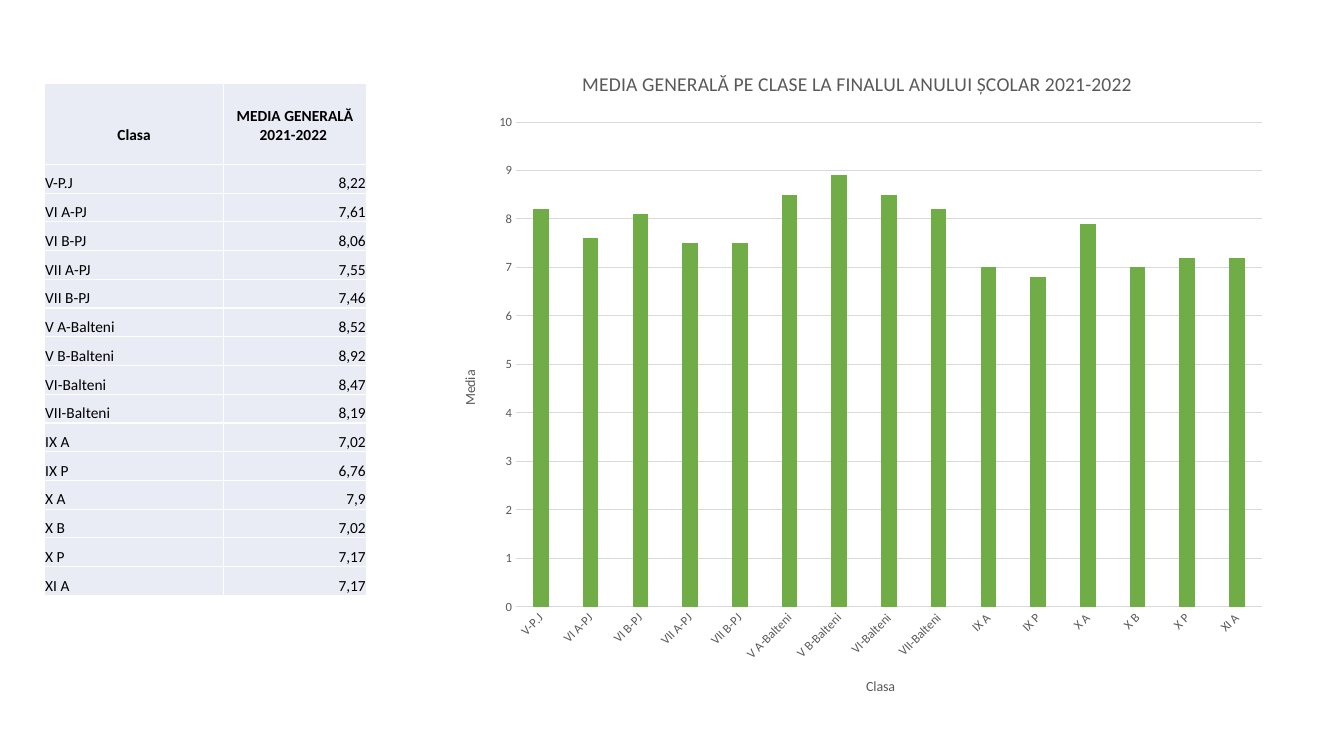
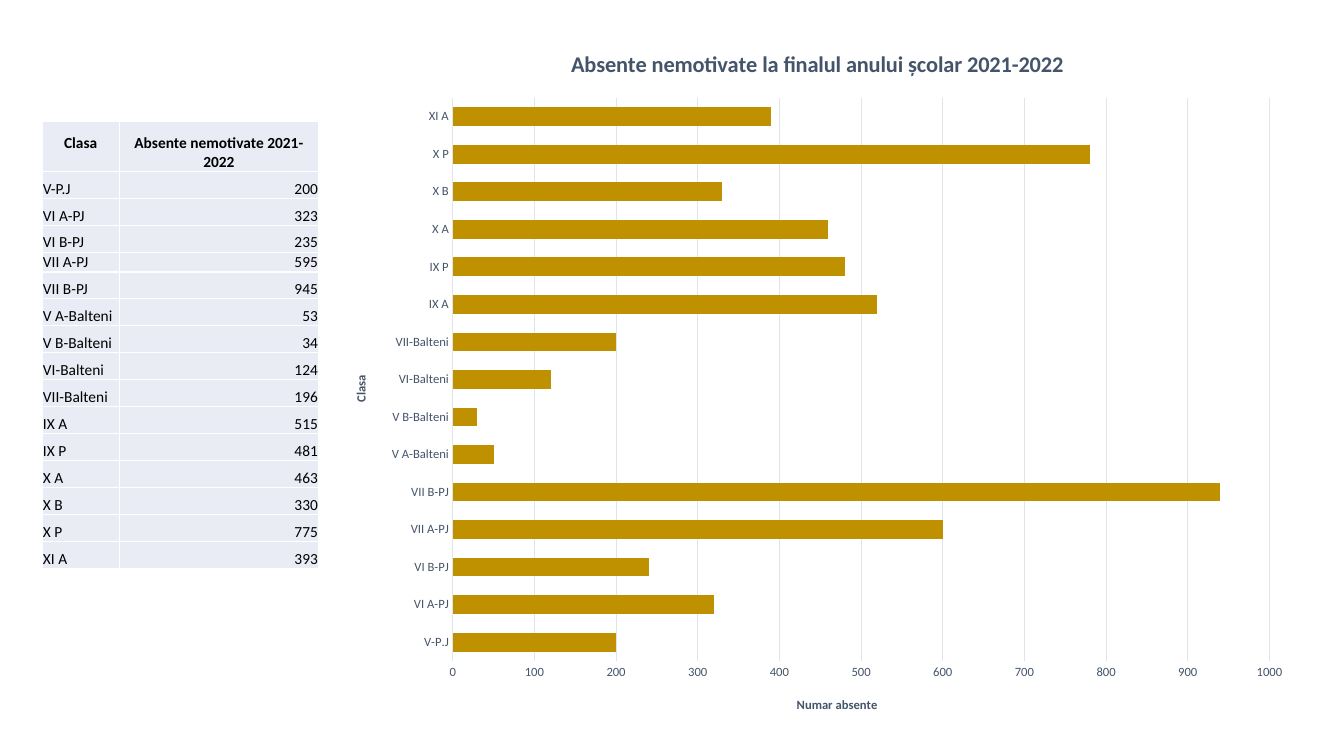
"""Build two slides that compare school classes by average grade and by absences."""
from dataclasses import dataclass

from lxml import etree
from pptx import Presentation
from pptx.chart.data import CategoryChartData
from pptx.dml.color import RGBColor
from pptx.enum.chart import XL_CHART_TYPE, XL_TICK_MARK
from pptx.enum.text import MSO_ANCHOR, PP_ALIGN
from pptx.oxml.ns import qn
from pptx.util import Pt

COLUMNS = XL_CHART_TYPE.COLUMN_CLUSTERED
BARS = XL_CHART_TYPE.BAR_CLUSTERED
NO_TICK = XL_TICK_MARK.NONE
BOTTOM = MSO_ANCHOR.BOTTOM
LEFT, CENTER, RIGHT = PP_ALIGN.LEFT, PP_ALIGN.CENTER, PP_ALIGN.RIGHT


@dataclass(frozen=True)
class Theme:
    """Colours and type sizes shared by the slides."""

    font: str = "Calibri"
    ink: str = "000000"
    cell: str = "E9EBF5"
    border: str = "FFFFFF"
    gray: str = "595959"
    gray_line: str = "D9D9D9"
    slate: str = "44546A"
    slate_line: str = "E0E5EB"
    green: str = "70AD47"
    gold: str = "BF9000"
    table_size: float = 11
    label_size: float = 9


@dataclass(frozen=True)
class ChartStyle:
    """Look of one chart; box and plot are left, top, width, height on the slide."""

    kind: int
    bar_color: str
    text_color: str
    line_color: str
    title_size: float
    axis_title_size: float
    bold: bool
    gap: int
    overlap: int
    maximum: float
    step: float
    decimals: int
    box: tuple
    plot: tuple
    label_rotation: int = 0


THEME = Theme()
GRADE_STYLE = ChartStyle(COLUMNS, THEME.green, THEME.gray, THEME.gray_line, 14, 10,
                         False, 219, -27, 10, 1, 1, (314.6, 34.6, 599, 476.6),
                         (368.6, 87.2, 532.8, 346.3), -45)
ABSENCE_STYLE = ChartStyle(BARS, THEME.gold, THEME.slate, THEME.slate_line, 16, 9,
                           True, 100, 0, 1000, 100, -1, (237.6, 18, 692.6, 506.2),
                           (323.4, 70, 583.4, 402.2))
CLASSES = ["V-P.J", "VI A-PJ", "VI B-PJ", "VII A-PJ", "VII B-PJ", "V A-Balteni",
           "V B-Balteni", "VI-Balteni", "VII-Balteni", "IX A", "IX P", "X A", "X B",
           "X P", "XI A"]
GRADES = [8.22, 7.61, 8.06, 7.55, 7.46, 8.52, 8.92, 8.47, 8.19, 7.02, 6.76, 7.9,
          7.02, 7.17, 7.17]
ABSENCES = [200, 323, 235, 595, 945, 53, 34, 124, 196, 515, 481, 463, 330, 775, 393]


def style_font(font, color, size, bold=False):
    """Apply the theme font with a colour, size and weight."""
    font.name = THEME.font
    font.size = Pt(size)
    font.bold = bold
    font.color.rgb = RGBColor.from_string(color)


def add_borders(cell):
    """Draw a thin border on all four sides of a cell."""
    properties = cell._tc.get_or_add_tcPr()
    for side in ("a:lnL", "a:lnR", "a:lnT", "a:lnB"):
        line = etree.SubElement(properties, qn(side), w=str(Pt(1)))
        fill = etree.SubElement(line, qn("a:solidFill"))
        etree.SubElement(fill, qn("a:srgbClr"), val=THEME.border)


def fill_cell(cell, text, alignment, bold=False, bottom=0):
    """Write and style one table cell."""
    add_borders(cell)
    cell.fill.solid()
    cell.fill.fore_color.rgb = RGBColor.from_string(THEME.cell)
    cell.vertical_anchor = BOTTOM
    cell.margin_left = cell.margin_right = cell.margin_top = Pt(0.5)
    cell.margin_bottom = Pt(bottom)
    cell.text = text
    paragraph = cell.text_frame.paragraphs[0]
    paragraph.alignment = alignment
    style_font(paragraph.font, THEME.ink, THEME.table_size, bold)


def add_class_table(slide, position, widths, heights, headers, header_bottoms, values):
    """Add a table with one row per class and one value column."""
    frame = slide.shapes.add_table(len(heights), len(widths), *map(Pt, position),
                                   Pt(sum(widths)), Pt(sum(heights)))
    table = frame.table
    table.first_row = table.horz_banding = False
    for column, width in zip(table.columns, widths):
        column.width = Pt(width)
    for row, height in zip(table.rows, heights):
        row.height = Pt(height)
    for column, (header, bottom) in enumerate(zip(headers, header_bottoms)):
        fill_cell(table.cell(0, column), header, CENTER, True, bottom)
    for row, (name, value) in enumerate(zip(CLASSES, values), start=1):
        fill_cell(table.cell(row, 0), name, LEFT)
        fill_cell(table.cell(row, 1), str(value).replace(".", ","), RIGHT)


def set_title(owner, text, color, size, bold):
    """Give a chart or an axis a styled title."""
    owner.has_title = True
    title = owner.chart_title if hasattr(owner, "chart_title") else owner.axis_title
    title.text_frame.text = text
    style_font(title.text_frame.paragraphs[0].font, color, size, bold)


def style_line(line, color):
    """Draw a hairline in the given colour."""
    line.width = Pt(0.75)
    line.color.rgb = RGBColor.from_string(color)


def style_axis(axis, title, style):
    """Style the labels, ticks and title of an axis."""
    axis.major_tick_mark = axis.minor_tick_mark = NO_TICK
    style_font(axis.tick_labels.font, style.text_color, THEME.label_size)
    set_title(axis, title, style.text_color, style.axis_title_size, style.bold)


def place_plot(chart, box, plot):
    """Fix the inner plot area inside the chart box."""
    left, top, width, height = box
    fractions = ((plot[0] - left) / width, (plot[1] - top) / height,
                 plot[2] / width, plot[3] / height)
    plot_area = chart._chartSpace.chart.plotArea
    for old_layout in plot_area.findall(qn("c:layout")):
        plot_area.remove(old_layout)
    layout = etree.Element(qn("c:layout"))
    plot_area.insert(0, layout)
    manual = etree.SubElement(layout, qn("c:manualLayout"))
    settings = [("layoutTarget", "inner"), ("xMode", "edge"), ("yMode", "edge")]
    for tag, value in settings + list(zip("xywh", fractions)):
        etree.SubElement(manual, qn(f"c:{tag}"), val=str(value))


def add_class_chart(slide, title, category_title, value_title, values, style):
    """Add a bar or column chart with one bar per class."""
    data = CategoryChartData()
    data.categories = CLASSES
    data.add_series(value_title, [round(value, style.decimals) for value in values])
    chart = slide.shapes.add_chart(style.kind, *map(Pt, style.box), data).chart
    chart.has_legend = False
    style_font(chart.font, THEME.ink, 10)
    set_title(chart, title, style.text_color, style.title_size, style.bold)
    chart.chart_title.include_in_layout = False
    place_plot(chart, style.box, style.plot)

    plot = chart.plots[0]
    plot.vary_by_categories = False
    plot.gap_width, plot.overlap = style.gap, style.overlap
    fill = plot.series[0].format.fill
    fill.solid()
    fill.fore_color.rgb = RGBColor.from_string(style.bar_color)

    category_axis, value_axis = chart.category_axis, chart.value_axis
    style_axis(category_axis, category_title, style)
    style_line(category_axis.format.line, style.line_color)
    if style.label_rotation:
        body = category_axis._element.find(qn("c:txPr")).find(qn("a:bodyPr"))
        body.set("rot", str(style.label_rotation * 60000))
    style_axis(value_axis, value_title, style)
    value_axis.format.line.fill.background()
    value_axis.minimum_scale, value_axis.maximum_scale = 0, style.maximum
    value_axis.major_unit = style.step
    value_axis.tick_labels.number_format = "0"
    value_axis.tick_labels.number_format_is_linked = False
    style_line(value_axis.major_gridlines.format.line, style.line_color)


def add_grades_slide(presentation):
    """Add the slide with the average grade of each class."""
    slide = presentation.slides.add_slide(presentation.slide_layouts[6])
    heights = [57.6] + [20.55] * len(CLASSES)
    add_class_table(slide, (31.8, 59.8), (128, 102), heights,
                    ("Clasa", "MEDIA GENERALĂ 2021-2022 "), (14, 14), GRADES)
    add_class_chart(slide, "MEDIA GENERALĂ PE CLASE LA FINALUL ANULUI ȘCOLAR 2021-2022 ",
                    "Clasa", "Media", GRADES, GRADE_STYLE)


def add_absences_slide(presentation):
    """Add the slide with the unexcused absences of each class."""
    slide = presentation.slides.add_slide(presentation.slide_layouts[6])
    heights = [36] + [14 if name == "VII A-PJ" else 19.25 for name in CLASSES]
    add_class_table(slide, (30.2, 86.4), (55, 142.4), heights,
                    ("Clasa", "Absente nemotivate 2021-2022"), (13.5, 0), ABSENCES)
    add_class_chart(slide, "Absente nemotivate la finalul anului școlar 2021-2022",
                    "Clasa", "Numar absente", ABSENCES, ABSENCE_STYLE)


def main():
    """Build and save the presentation."""
    presentation = Presentation()
    presentation.slide_width, presentation.slide_height = Pt(960), Pt(540)
    add_grades_slide(presentation)
    add_absences_slide(presentation)
    presentation.save("out.pptx")


if __name__ == "__main__":
    main()
